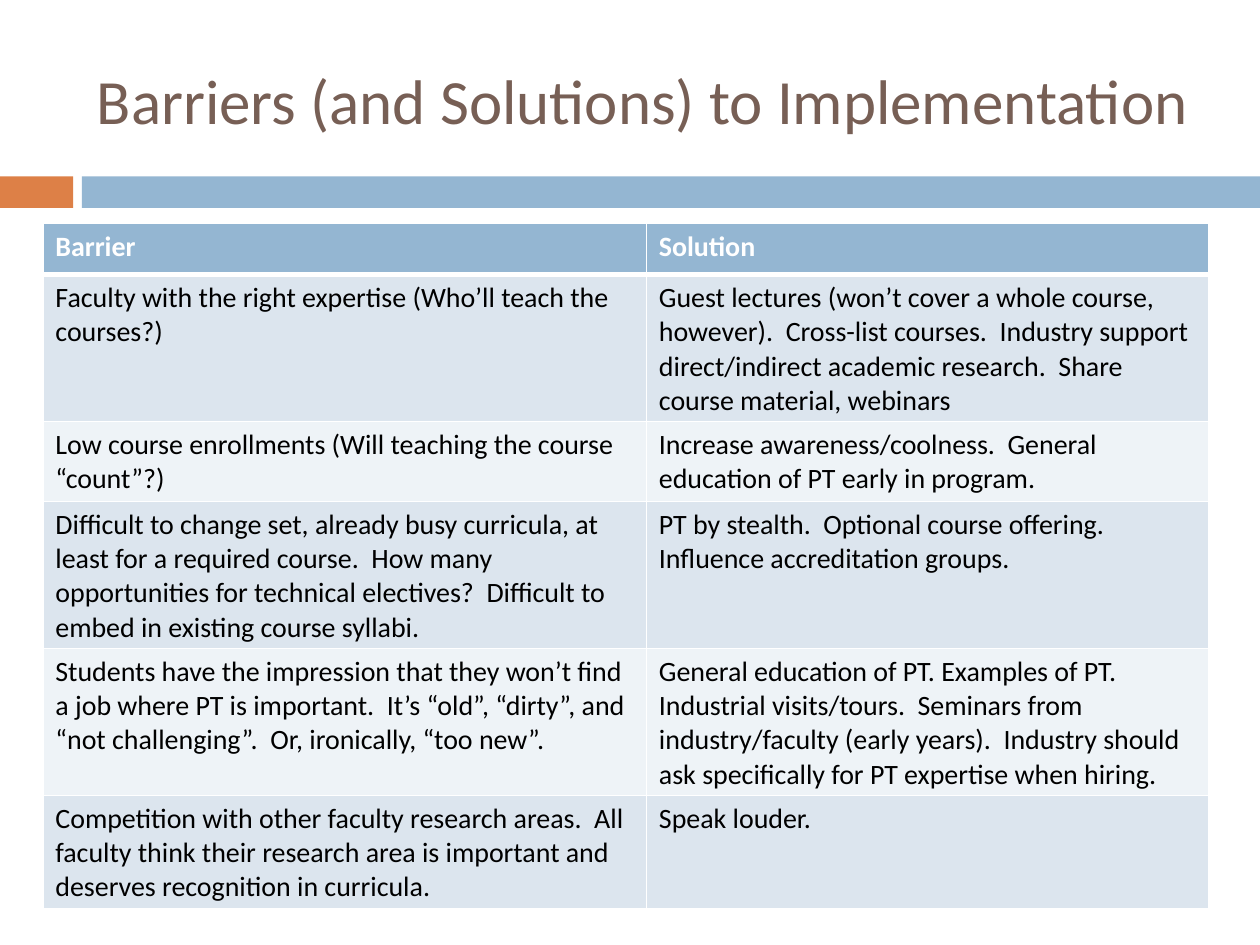
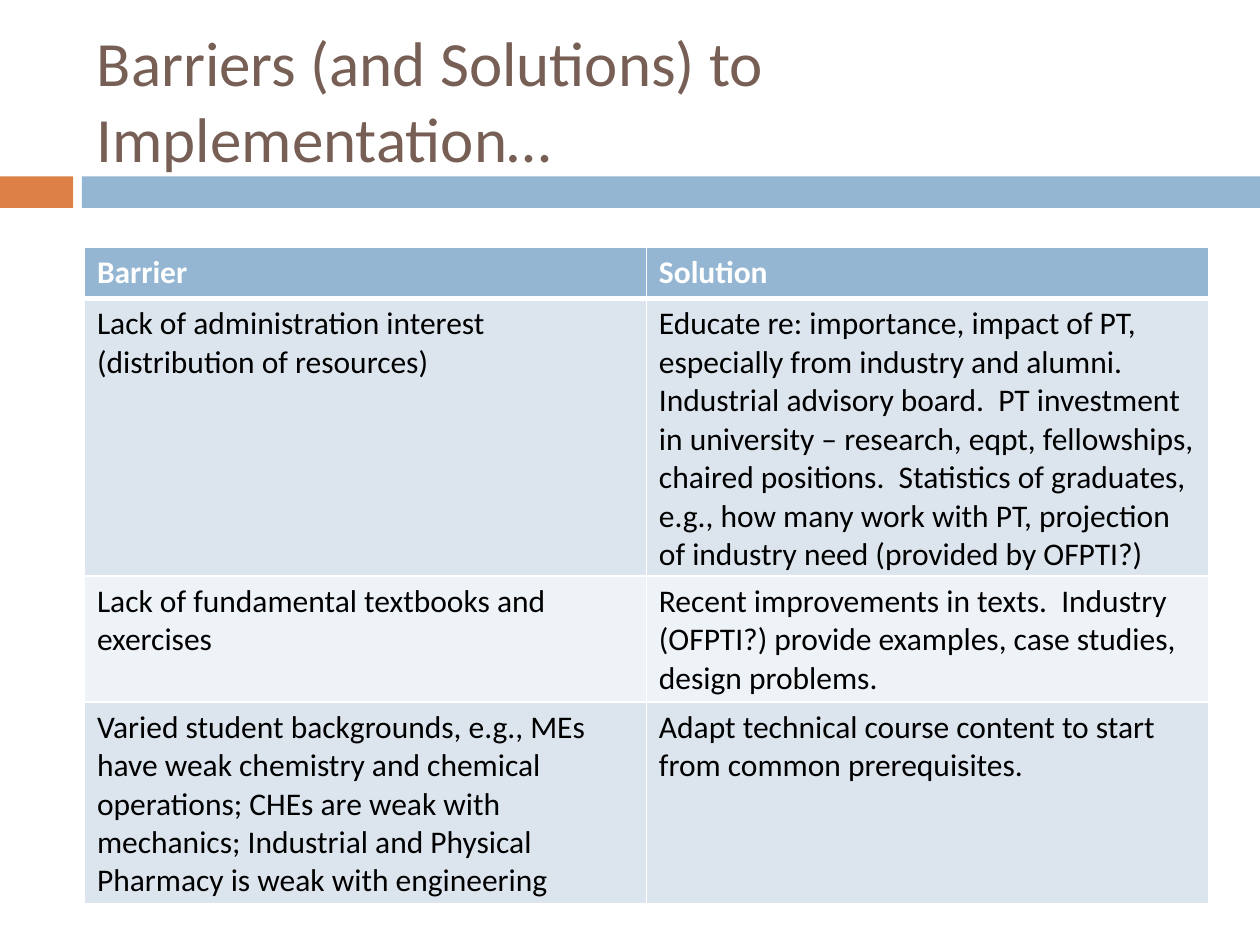
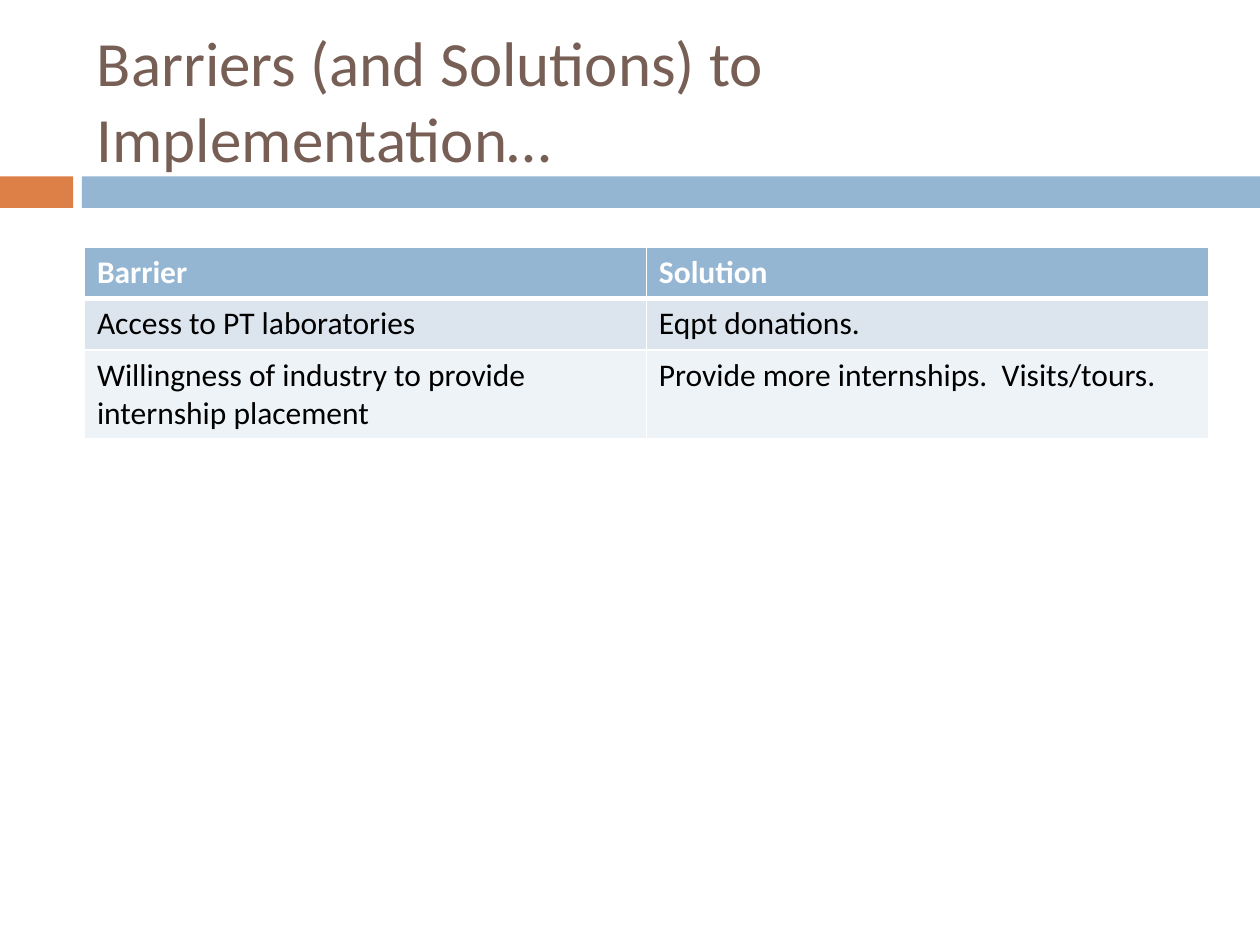
from dataclasses import dataclass

from lxml import etree
from pptx import Presentation
from pptx import util as u
from pptx.dml import color
from pptx.enum import shapes, text
from pptx.oxml import ns


@dataclass(frozen=True)
class Theme:
    font: str = "Calibri"
    title_size: int = 36
    title: str = "775F55"
    accent: str = "DD8047"
    band: str = "94B6D2"
    white: str = "FFFFFF"
    ink: str = "000000"
    stripes: tuple = ("DCE5EE", "EEF3F7")
    thin: float = 1
    thick: float = 3


THEME = Theme()
WIDTH, HEIGHT = 10, 7.5
LEFT, COLUMN, ROW = 0.67, 4.46, 0.41
RIGHT = LEFT + 2 * COLUMN
BAND_TOP, BAND_HEIGHT = 1.4, 0.25
HEADINGS = ("Barrier", "Solution")

FIRST_BARRIERS = [
    ("Faculty with the right expertise (Who’ll teach the courses?)",
     "Guest lectures (won’t cover a whole course, however).  Cross-list courses.  "
     "Industry support direct/indirect academic research.  Share course material, webinars"),
    ("Low course enrollments (Will teaching the course “count”?)",
     "Increase awareness/coolness.  General education of PT early in program."),
    ("Difficult to change set, already busy curricula, at least for a required course.  "
     "How many opportunities for technical electives?  "
     "Difficult to embed in existing course syllabi.",
     "PT by stealth.  Optional course offering. Influence accreditation groups."),
    ("Students have the impression that they won’t find a job where PT is important.  "
     "It’s “old”, “dirty”, and “not challenging”.  Or, ironically, “too new”.",
     "General education of PT. Examples of PT.  Industrial visits/tours.  "
     "Seminars from industry/faculty (early years).  "
     "Industry should ask specifically for PT expertise when hiring."),
    ("Competition with other faculty research areas.  All faculty think their "
     "research area is important and deserves recognition in curricula.",
     "Speak louder."),
]
RESOURCE_BARRIERS = [
    ("Lack of administration interest (distribution of resources)",
     "Educate re: importance, impact of PT, especially from industry and alumni. "
     "Industrial advisory board.  PT investment in university – research, eqpt, "
     "fellowships, chaired positions.  Statistics of graduates, e.g., how many work "
     "with PT, projection of industry need (provided by OFPTI?)"),
    ("Lack of fundamental textbooks and exercises",
     "Recent improvements in texts.  Industry (OFPTI?) provide examples, "
     "case studies, design problems."),
    ("Varied student backgrounds, e.g., MEs have weak chemistry and chemical operations; "
     "CHEs are weak with mechanics; Industrial and Physical Pharmacy is weak with engineering",
     "Adapt technical course content to start from common prerequisites."),
]
ACCESS_BARRIERS = [
    ("Access to PT laboratories", "Eqpt donations."),
    ("Willingness of industry to provide internship placement",
     "Provide more internships.  Visits/tours."),
]


def rgb(value):
    return color.RGBColor.from_string(value)


def add_run(para, words, size, tint, bold=False):
    span = para.add_run()
    span.text = words
    span.font.name = THEME.font
    span.font.size = u.Pt(size)
    span.font.bold = bold
    span.font.color.rgb = rgb(tint)


def add_band(page, left, right, tint):
    band = page.shapes.add_shape(
        shapes.MSO_SHAPE.RECTANGLE, u.Inches(left), u.Inches(BAND_TOP),
        u.Inches(right - left), u.Inches(BAND_HEIGHT))
    band.shadow.inherit = False
    band.fill.solid()
    band.fill.fore_color.rgb = rgb(tint)
    band.line.fill.background()


def add_title(page, words):
    box = page.shapes.add_textbox(
        u.Inches(LEFT), u.Inches(0.25), u.Inches(RIGHT - LEFT), u.Inches(1.08))
    frame = box.text_frame
    frame.word_wrap = True
    frame.vertical_anchor = text.MSO_ANCHOR.MIDDLE
    add_run(frame.paragraphs[0], words, THEME.title_size, THEME.title)


def add_borders(cell, top, bottom):
    properties = cell._tc.get_or_add_tcPr()
    widths = {"L": THEME.thin, "R": THEME.thin, "T": top, "B": bottom}
    for side, width in widths.items():
        line = etree.SubElement(properties, ns.qn(f"a:ln{side}"), w=str(u.Pt(width)))
        fill = etree.SubElement(line, ns.qn("a:solidFill"))
        etree.SubElement(fill, ns.qn("a:srgbClr"), val=THEME.white)


def fill_cell(cell, words, row, size):
    header = row == 0
    add_borders(cell, THEME.thick if row == 1 else THEME.thin,
                THEME.thick if header else THEME.thin)
    cell.fill.solid()
    cell.fill.fore_color.rgb = rgb(THEME.band if header else THEME.stripes[(row - 1) % 2])
    add_run(cell.text_frame.paragraphs[0], words, size,
            THEME.white if header else THEME.ink, header)


def add_barrier_table(page, barriers, left, top, size):
    rows = [HEADINGS, *barriers]
    table = page.shapes.add_table(
        len(rows), len(HEADINGS), u.Inches(left), u.Inches(top),
        u.Inches(RIGHT - left), u.Inches(ROW * len(rows))).table
    table.columns[0].width = u.Inches(RIGHT - COLUMN - left)
    table.columns[1].width = u.Inches(COLUMN)
    for row, entries in enumerate(rows):
        table.rows[row].height = u.Inches(ROW)
        for column, words in enumerate(entries):
            fill_cell(table.cell(row, column), words, row, size)


def add_page(deck, title, barriers, left=LEFT, top=1.96, size=18):
    page = deck.slides.add_slide(deck.slide_layouts[6])
    add_band(page, 0, 0.58, THEME.accent)
    add_band(page, 0.65, WIDTH, THEME.band)
    add_title(page, title)
    add_barrier_table(page, barriers, left, top, size)


def main():
    deck = Presentation()
    deck.slide_width, deck.slide_height = u.Inches(WIDTH), u.Inches(HEIGHT)
    title = "Barriers (and Solutions) to Implementation"
    add_page(deck, title, FIRST_BARRIERS, left=0.34, top=1.77, size=16)
    for barriers in (RESOURCE_BARRIERS, ACCESS_BARRIERS):
        add_page(deck, title + "…", barriers)
    deck.save("out.pptx")


if __name__ == "__main__":
    main()
